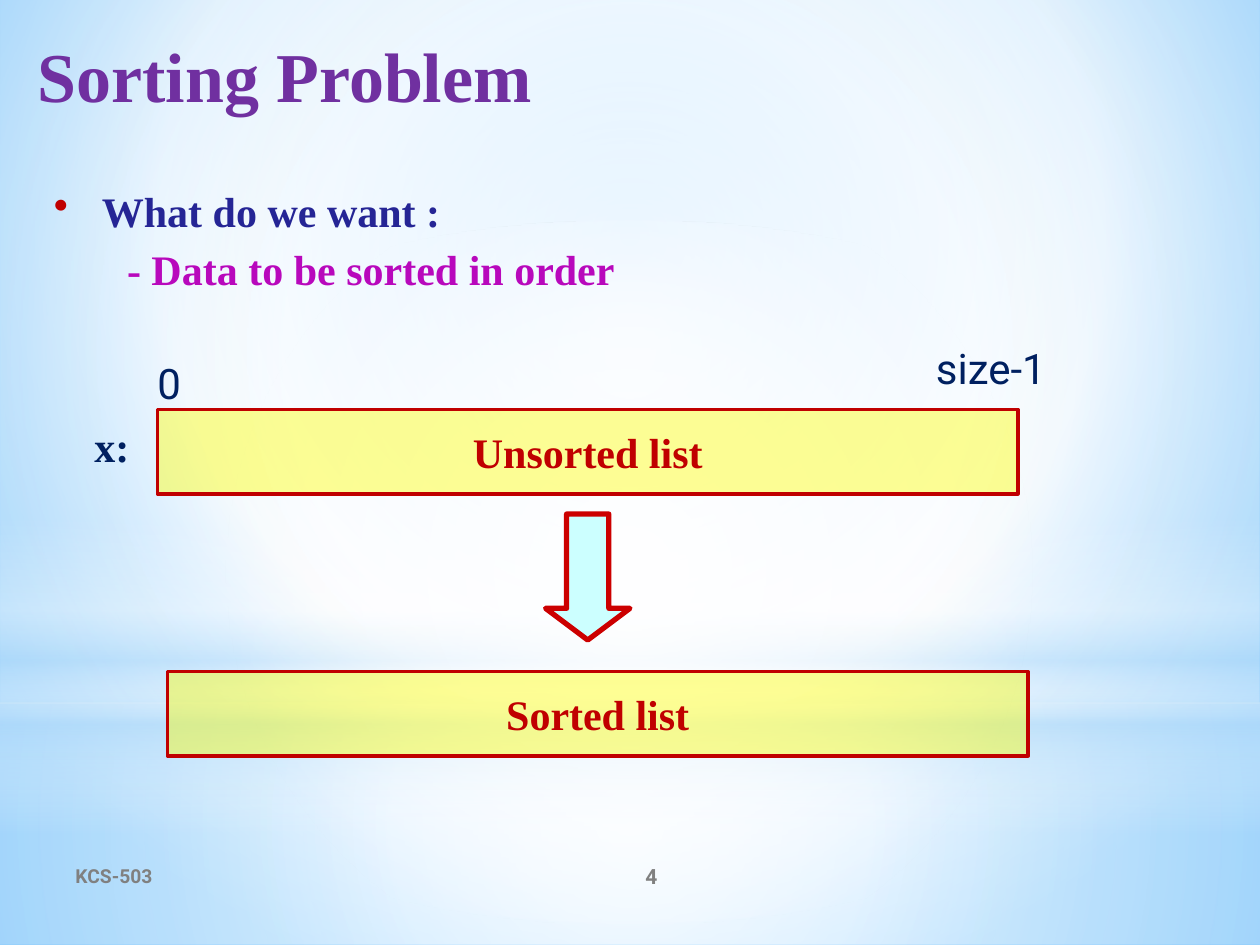
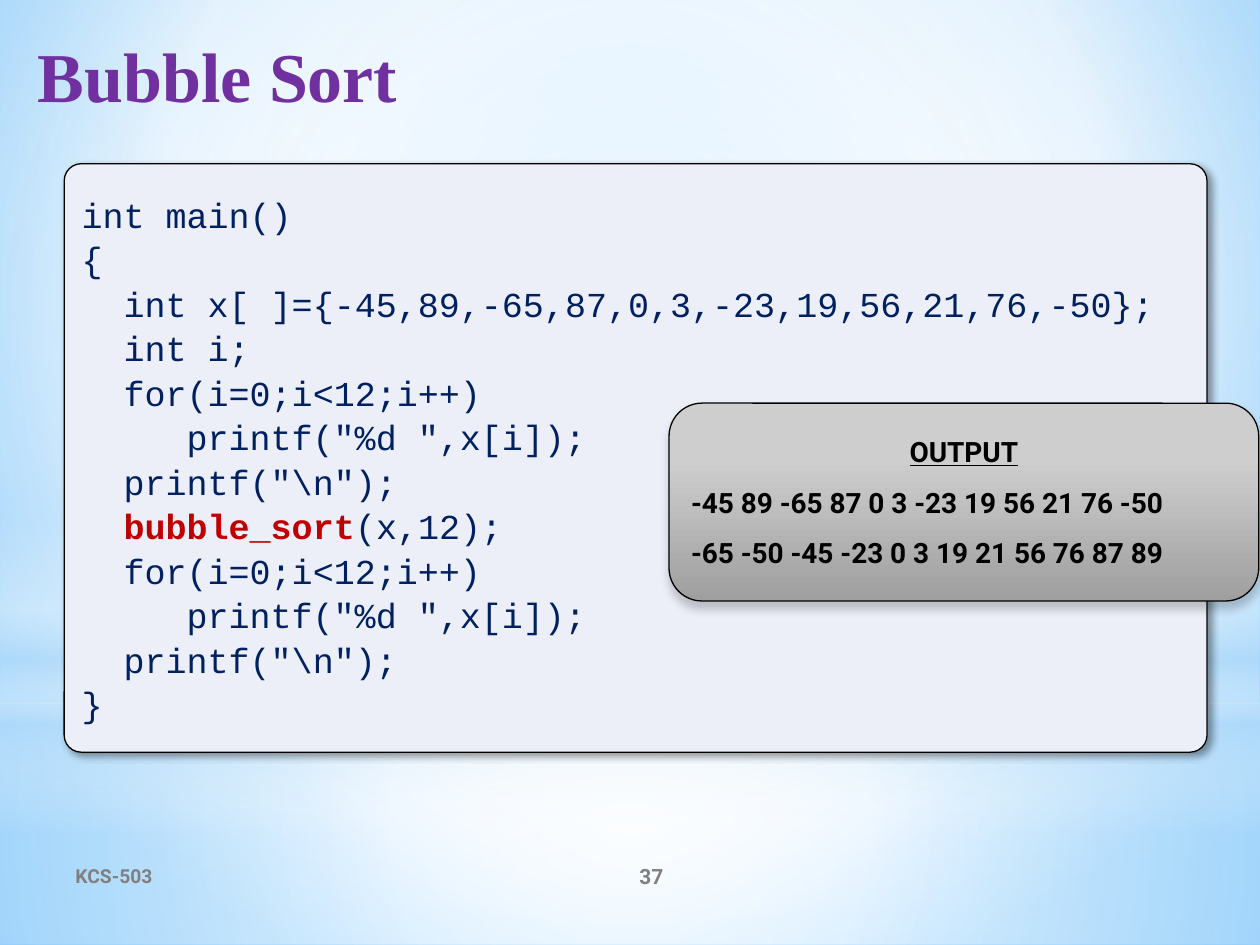
from dataclasses import dataclass

from pptx import Presentation
from pptx.dml.color import RGBColor
from pptx.enum.shapes import MSO_SHAPE
from pptx.enum.text import MSO_ANCHOR, MSO_AUTO_SIZE, PP_ALIGN
from pptx.oxml import parse_xml
from pptx.oxml.ns import nsdecls, qn
from pptx.util import Inches, Pt

RECT, ROUND, OVAL = MSO_SHAPE.RECTANGLE, MSO_SHAPE.ROUNDED_RECTANGLE, MSO_SHAPE.OVAL
ARROW = MSO_SHAPE.DOWN_ARROW
TOP, MIDDLE = MSO_ANCHOR.TOP, MSO_ANCHOR.MIDDLE
LEFT, CENTER = PP_ALIGN.LEFT, PP_ALIGN.CENTER
FIT, FIXED = MSO_AUTO_SIZE.SHAPE_TO_FIT_TEXT, MSO_AUTO_SIZE.NONE


@dataclass(frozen=True)
class Theme:
    serif: str = "Times New Roman"
    sans: str = "Roboto"
    mono: str = "Courier New"
    purple: str = "7030A0"
    navy: str = "002060"
    indigo: str = "252595"
    pink: str = "B808BC"
    red: str = "C00000"
    edge: str = "CC0000"
    yellow: str = "FFFF00"
    cyan: str = "CCFFFF"
    panel: str = "ECEFF8"
    grey: str = "808080"
    black: str = "000000"
    white: str = "FFFFFF"
    sky: str = "B4DCFA"
    head: int = 40
    body: int = 24
    code: int = 20
    note: int = 16
    page: int = 12
    foot: int = 11


T = Theme()
MID = (50, 50, 50, 50)
HEAD = {"name": T.serif, "size": T.head, "color": T.purple, "bold": True}
BODY = {"name": T.serif, "size": T.body, "color": T.navy, "bold": True}
LABEL = {"name": T.sans, "size": T.body, "color": T.navy}
CODE = {"name": T.mono, "size": T.code, "color": T.navy}
NOTE = {"name": T.sans, "size": T.note, "color": T.black, "bold": True}
FOOT = {"name": T.sans, "size": T.foot, "color": T.grey, "bold": True}


def node(text):
    """Parse one drawing element."""
    return parse_xml(text.replace(">", f" {nsdecls('a')}>", 1))


def hue(color, alpha=100):
    return (f'<a:srgbClr val="{color}">'
            f'<a:alpha val="{alpha * 1000}"/></a:srgbClr>')


def blend(host, stops, aim):
    """Swap the solid fill in host for a gradient; aim is an angle or a focus."""
    parts = "".join(f'<a:gs pos="{pos * 1000}">{hue(*tint)}</a:gs>'
                    for pos, *tint in stops)
    if isinstance(aim, tuple):
        rect = " ".join(f'{side}="{inset * 1000}"' for side, inset in zip("ltrb", aim))
        way = f'<a:path path="circle"><a:fillToRect {rect}/></a:path>'
    else:
        way = f'<a:lin ang="{aim * 60000}" scaled="0"/>'
    solid = host.find(qn("a:solidFill"))
    host.replace(solid, node(f"<a:gradFill><a:gsLst>{parts}</a:gsLst>{way}</a:gradFill>"))


def draw(slide, kind, box, fill, line=None, width=1, alpha=100, aim=None,
         shade=None, adjust=()):
    """Add a shape; fill is a colour, or a list of stops when aim is given."""
    shape = slide.shapes.add_shape(kind, *map(Inches, box))
    for i, value in enumerate(adjust):
        shape.adjustments[i] = value
    host = shape.element.spPr
    shape.fill.solid()
    shape.fill.fore_color.rgb = RGBColor.from_string(T.white if aim else fill)
    if aim:
        blend(host, fill, aim)
    elif alpha < 100:
        old = host.find(qn("a:solidFill"))
        host.replace(old, node(f"<a:solidFill>{hue(fill, alpha)}</a:solidFill>"))
    if line:
        shape.line.color.rgb = RGBColor.from_string(line)
        shape.line.width = Pt(width)
    else:
        shape.line.fill.background()
    shape.shadow.inherit = False
    if shade:
        fade, blur, dist, turn = shade
        host.find(qn("a:effectLst")).append(node(
            f'<a:outerShdw blurRad="{Pt(blur)}" dist="{Pt(dist)}" dir="{turn * 60000}"'
            f' algn="ctr" rotWithShape="0">{hue(T.black, fade)}</a:outerShdw>'))
    return shape


def style(font, look):
    for key, value in look.items():
        if key == "color":
            font.color.rgb = RGBColor.from_string(value)
        else:
            setattr(font, key, Pt(value) if key == "size" else value)


def write(shape, lines, look, wrap=True, anchor=TOP, size=FIXED, **common):
    """Fill a shape; a line is (runs, format), a run is (text, changes to look)."""
    frame = shape.text_frame
    for key, value in {"word_wrap": wrap, "vertical_anchor": anchor,
                       "auto_size": size}.items():
        setattr(frame, key, value)
    for i, (runs, form) in enumerate(lines):
        para = frame.add_paragraph() if i else frame.paragraphs[0]
        form = {"alignment": LEFT, **common, **form}
        hang = form.pop("hang", None)
        inset = form.pop("inset", 0)
        for key, value in form.items():
            setattr(para, key, value)
        props = para._p.get_or_add_pPr()
        props.set("marL", str(Inches(inset)))
        props.set("indent", str(-Inches(inset) if hang else 0))
        if hang:
            props.append(node(f"<a:buClr>{hue(hang)}</a:buClr>"))
            props.append(node('<a:buChar char="•"></a:buChar>'))
        for text, change in runs:
            run = para.add_run()
            run.text = text
            style(run.font, {**look, **change})


def plain(text, **form):
    return [([(text, {})], form)]


def label(slide, box, text, look, **form):
    write(slide.shapes.add_textbox(*map(Inches, box)), plain(text), look, **form)


def dress(deck, slide):
    """Give the master its backdrop, drawn on slide and moved from there."""
    master = deck.slide_master
    master.background.fill.solid()
    blend(master.element.find(".//" + qn("p:bgPr")),
          [(0, "9ED5FF"), (60, T.white), (100, "5BB9FF")], (20, 10, 20, 60))
    veils = [
        (RECT, (0, 5.58, 10, 1.92),
         [(0, T.white, 91), (37, T.white, 76), (100, T.sky, 79)], MID),
        (RECT, (0, 0, 10, 5.58),
         [(0, T.white, 89), (48, T.white, 62), (100, T.sky, 79)], MID),
        (RECT, (0, 4.12, 10, 2.5),
         [(0, T.white, 0), (29, T.white, 30), (45, T.sky, 40),
          (55, T.white, 26), (65, T.sky, 60), (100, T.white, 0)], 90),
        (OVAL, (0, 1.75, 10, 5.58), [(0, T.white), (56, T.white, 0)], MID),
    ]
    for i, (kind, box, stops, aim) in enumerate(veils):
        veil = draw(slide, kind, box, stops, aim=aim)
        master.shapes.element.insert(2 + i, veil.element)


def start(deck, title, page):
    """Add a slide with its title and footer."""
    slide = deck.slides.add_slide(deck.slide_layouts[5])
    head = slide.shapes.title
    for key, value in zip(("left", "top", "width", "height"), (0.2, 0.21, 9.53, 1.1)):
        setattr(head, key, Inches(value))
    write(head, plain(title), HEAD)
    label(slide, (0.5, 6.75, 3.67, 0.4), "KCS-503", FOOT, anchor=MIDDLE)
    label(slide, (4.17, 6.75, 2, 0.4), page, {**FOOT, "size": T.page},
          anchor=MIDDLE, alignment=CENTER)
    return slide


def goal(slide, box):
    lines = [
        ([("What do we want :", {"color": T.indigo})],
         {"inset": 0.38, "hang": T.red, "space_before": Pt(2)}),
        ([("- Data to be sorted in order", {"color": T.pink})],
         {"inset": 0.58, "space_before": Pt(4.5)}),
    ]
    write(slide.shapes.add_textbox(*map(Inches, box)), lines, BODY)


def sorting(slide, box):
    """Unsorted bar over sorted bar, with an arrow between and index labels."""
    x, y, w, h = box
    bar = 0.67
    for text, left, top in (("Unsorted list", x, y),
                            ("Sorted list", x + 0.08, y + h - bar)):
        shape = draw(slide, RECT, (left, top, w, bar), T.yellow, T.red, 2, alpha=42)
        write(shape, plain(text), {**BODY, "color": T.red}, wrap=False,
              anchor=MIDDLE, alignment=CENTER)
    draw(slide, ARROW, (x + (w - bar) / 2, y + 0.83, bar, 1), T.cyan, T.edge, 3,
         adjust=(0.5, 0.375))
    label(slide, (x - 0.6, y + 0.04, 0.48, 0.5), "x:", BODY, wrap=False, size=FIT)
    label(slide, (x - 0.1, y - 0.46, 0.39, 0.5), "0", LABEL, wrap=False, size=FIT)
    label(slide, (x + w - 0.75, y - 0.58, 1.42, 0.5), "size-1", LABEL, size=FIT)


def listing(slide, box):
    """Code panel; each line is its column and its text."""
    loop = [(2, "for(i=0;i<12;i++)"), (5, 'printf("%d ",x[i]);'), (2, 'printf("\\n");')]
    call = "bubble_sort"
    code = [(0, "int main()"), (0, "{"),
            (2, "int x[ ]={-45,89,-65,87,0,3,-23,19,56,21,76,-50};"),
            (2, "int i;"), *loop, (2, call + "(x,12);"), *loop, (0, "}")]
    lines = []
    for column, text in code:
        runs = [(text, {})]
        if text.startswith(call):
            runs = [(call, {"color": T.red, "bold": True}), (text[len(call):], {})]
        lines.append((runs, {"inset": column / 6}))
    panel = draw(slide, ROUND, box, T.panel, T.black, 0.75,
                 shade=(40, 4, 3, 45), adjust=(0.029,))
    write(panel, lines, CODE, anchor=MIDDLE, line_spacing=1.06)


def output(slide, box):
    panel = draw(slide, ROUND, box, [(28, "CECECE"), (100, "9F9F9F")], T.black, 0.75,
                 aim=90, shade=(20, 5, 4, 90))
    lines = [([("OUTPUT", {"underline": True})], {"alignment": CENTER})]
    for row in ("-45 89 -65 87 0 3 -23 19 56 21 76 -50",
                "-65 -50 -45 -23 0 3 19 21 56 76 87 89"):
        lines += plain(row, space_before=Pt(9.8))
    write(panel, lines, NOTE, anchor=MIDDLE)


def main():
    deck = Presentation()
    deck.slide_width, deck.slide_height = Inches(10), Inches(7.5)
    first = start(deck, "Sorting Problem", "4")
    dress(deck, first)
    goal(first, (0.33, 1.42, 9.42, 1.17))
    sorting(first, (1.25, 3.25, 6.83, 2.75))
    second = start(deck, "Bubble Sort", "37")
    listing(second, (0.51, 1.3, 9.07, 4.67))
    output(second, (5.31, 3.2, 4.68, 1.57))
    deck.save("out.pptx")


if __name__ == "__main__":
    main()
